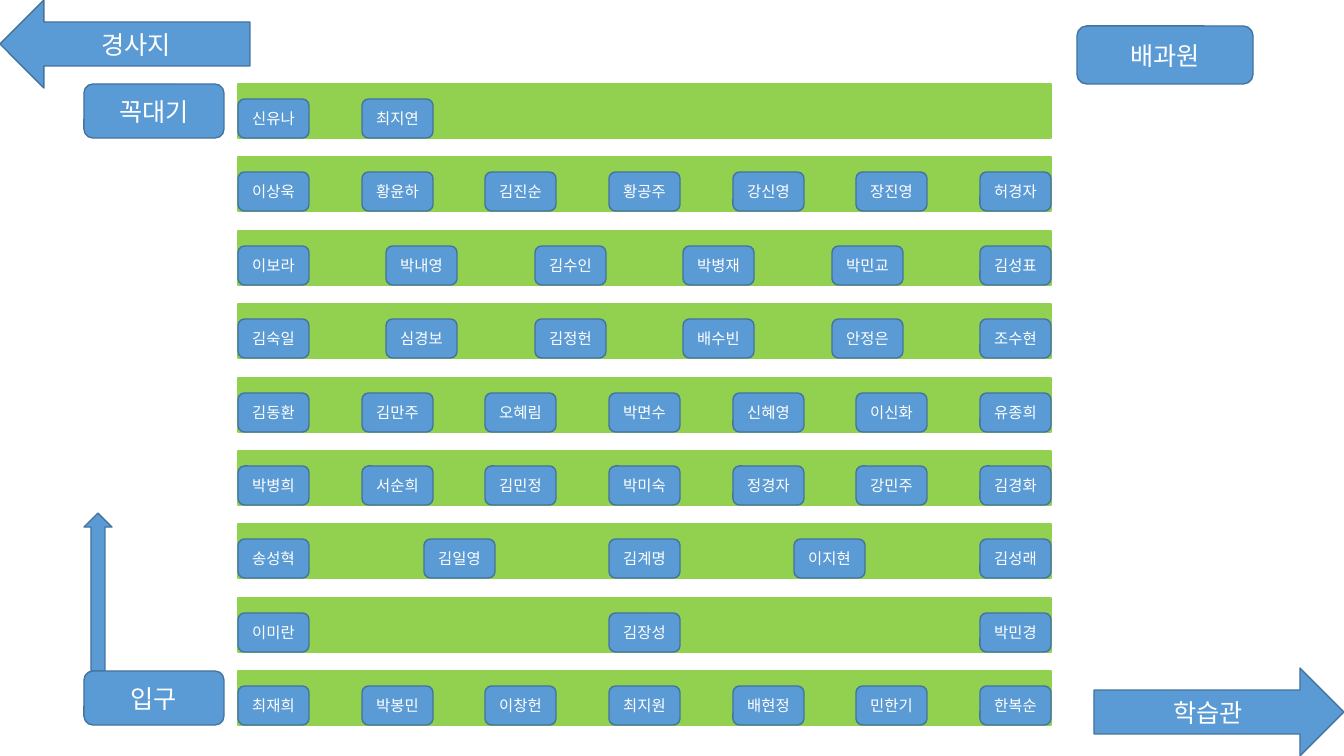
from lxml import etree
from pptx import Presentation
from pptx import util as u
from pptx.dml.color import RGBColor
from pptx.enum import shapes, text
from pptx.oxml.ns import qn

SCALE = 12192000 / 1344
FONT = "Noto Sans CJK KR"
GREEN, BLUE, EDGE, WHITE = "92D050", "5B9BD5", "43739E", "FFFFFF"
KIND = shapes.MSO_SHAPE

FIELD_LEFT, FIELD_TOP, FIELD_WIDTH = 238, 84, 813
BAND_HEIGHT, BANDS_SPAN = 54, 587
PLOT_WIDTH, PLOT_HEIGHT, PLOT_DROP = 71, 39, 15

ROWS = [
    (7, "신유나 최지연"),
    (7, "이상욱 황윤하 김진순 황공주 강신영 장진영 허경자"),
    (6, "이보라 박내영 김수인 박병재 박민교 김성표"),
    (6, "김숙일 심경보 김정헌 배수빈 안정은 조수현"),
    (7, "김동환 김만주 오혜림 박면수 신혜영 이신화 유종희"),
    (7, "박병희 서순희 김민정 박미숙 정경자 강민주 김경화"),
    (5, "송성혁 김일영 김계명 이지현 김성래"),
    (3, "이미란 김장성 박민경"),
    (7, "최재희 박봉민 이창헌 최지원 배현정 민한기 한복순"),
]

LANDMARKS = [
    (KIND.ROUNDED_RECTANGLE, (1077, 26, 176, 58), "배과원"),
    (KIND.LEFT_ARROW, (0, 0, 250, 88), "경사지"),
    (KIND.RIGHT_ARROW, (1094, 668, 250, 88), "학습관"),
    (KIND.ROUNDED_RECTANGLE, (84, 84, 140, 54), "꼭대기"),
    (KIND.UP_ARROW, (84, 513, 28, 158), ""),
    (KIND.ROUNDED_RECTANGLE, (84, 671, 140, 54), "입구"),
]


def px(n):
    return u.Emu(round(n * SCALE))


def color(value):
    return RGBColor.from_string(value)


def add_block(s, kind, box, fill, line):
    sp = s.shapes.add_shape(kind, *map(px, box))
    sp.shadow.inherit = False
    sp.fill.solid()
    sp.fill.fore_color.rgb = color(fill)
    sp.line.color.rgb = color(line)
    sp.line.width = u.Pt(1)
    return sp


def add_label(sp, label, size):
    tf = sp.text_frame
    tf.word_wrap = True
    tf.vertical_anchor = text.MSO_ANCHOR.MIDDLE
    p = tf.paragraphs[0]
    p.text = label
    p.alignment = text.PP_ALIGN.CENTER
    p.font.size = u.Pt(size)
    p.font.color.rgb = color(WHITE)
    p.font.name = FONT
    props = p._p.find(".//" + qn("a:defRPr"))
    etree.SubElement(props, qn("a:ea"), typeface=FONT)


def add_row(s, top, slots, names):
    add_block(s, KIND.RECTANGLE, (FIELD_LEFT, top, FIELD_WIDTH, BAND_HEIGHT), GREEN, GREEN)
    pitch = (FIELD_WIDTH - PLOT_WIDTH) / (slots - 1)
    for i, name in enumerate(names):
        box = (round(FIELD_LEFT + i * pitch), top + PLOT_DROP, PLOT_WIDTH, PLOT_HEIGHT)
        add_label(add_block(s, KIND.ROUNDED_RECTANGLE, box, BLUE, EDGE), name, 11)


def main():
    prs = Presentation()
    prs.slide_width, prs.slide_height = px(1344), px(756)
    s = prs.slides.add_slide(prs.slide_layouts[6])
    for i, (slots, names) in enumerate(ROWS):
        top = FIELD_TOP + round(i * BANDS_SPAN / (len(ROWS) - 1))
        add_row(s, top, slots, names.split())
    for kind, box, label in LANDMARKS:
        sp = add_block(s, kind, box, BLUE, EDGE)
        if label:
            add_label(sp, label, 18)
    prs.save("out.pptx")


if __name__ == "__main__":
    main()
